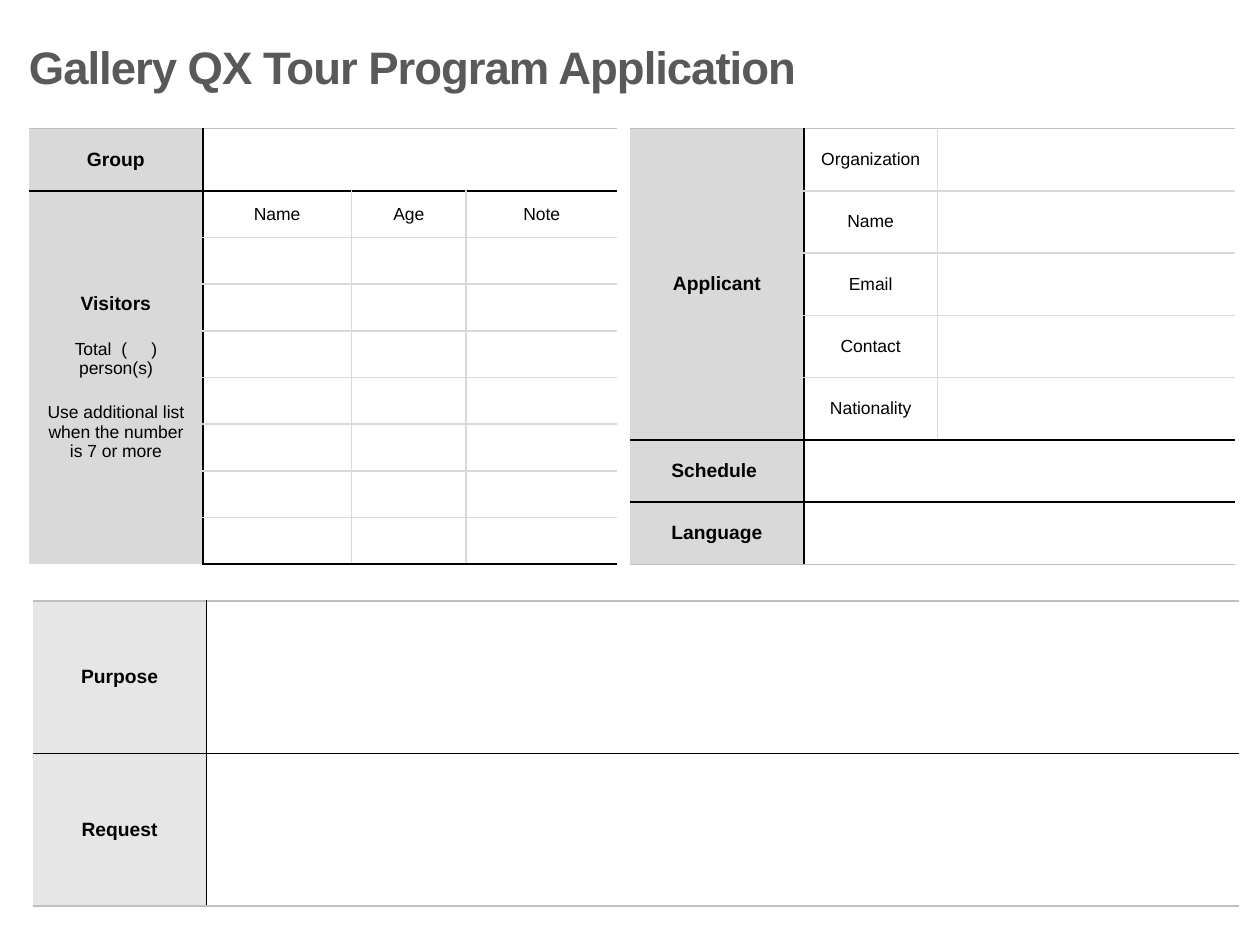
"""Build a one-page gallery tour application form from three ruled tables."""
from lxml import etree
from pptx import Presentation
from pptx.dml.color import RGBColor
from pptx.enum.text import MSO_ANCHOR, PP_ALIGN
from pptx.oxml.ns import qn
from pptx.util import Inches, Pt

MID, LEFT, CENTER = MSO_ANCHOR.MIDDLE, PP_ALIGN.LEFT, PP_ALIGN.CENTER
HUES = {"ink": "000000", "title": "595959", "rule": "D9D9D9",
        "rim": "BFBFBF", "label": "D9D9D9", "pale": "E6E6E6"}


def write(frame, text, size=10, bold=False, hue="ink", align=CENTER, gap=0, track=0):
    for i, line in enumerate(text.split("\n")):
        para = frame.paragraphs[0] if i == 0 and not frame.text else frame.add_paragraph()
        para.alignment = align
        para.space_before = Pt(gap)
        run = para.add_run()
        run.text = line
        font = run.font
        font.name, font.size, font.bold = "Arial", Pt(size), bold
        font.color.rgb = RGBColor.from_string(HUES[hue])
        if track:
            run._r.get_or_add_rPr().set("spc", str(track))


def edge(cell, spot, side, hue):
    line = etree.Element(qn("a:ln" + side), w=str(Pt(1)))
    if hue:
        fill = etree.SubElement(line, qn("a:solidFill"))
        etree.SubElement(fill, qn("a:srgbClr"), val=HUES[hue])
    else:
        etree.SubElement(line, qn("a:noFill"))
    cell._tc.get_or_add_tcPr().insert(spot, line)


deck = Presentation()
deck.slide_width, deck.slide_height = Inches(10), Inches(7.5)
slide = deck.slides.add_slide(deck.slide_layouts[6])
across, down = deck.slide_width / 100, deck.slide_height / 100

forms = [
    dict(at=(2.3, 13.6), cols=[13.8, 11.8, 9.1, 12], rows=[6.59] + [4.94] * 8,
         spans=[(0, 1, 0, 3), (1, 0, 8, 0)], bars=[0], foot="ink", tint="label",
         heads={0: "Group", 1: "Visitors"},
         words={(1, 1): "Name", (1, 2): "Age", (1, 3): "Note"}),
    dict(at=(50, 13.6), cols=[13.8, 10.6, 23.6], rows=[6.59] * 7,
         spans=[(0, 0, 4, 0), (5, 1, 5, 2), (6, 1, 6, 2)], bars=[4, 5],
         foot="rim", tint="label",
         heads={0: "Applicant", 5: "Schedule ", 6: "Language"},
         words={(i, 1): word for i, word in enumerate(
             ["Organization", "Name", "Email", "Contact", "Nationality"])}),
    dict(at=(2.6, 63.6), cols=[13.8, 81.9], rows=[16.13] * 2, spans=[], bars=[0],
         foot="rim", tint="pale", heads={0: "Purpose", 1: "Request"}, words={}),
]

grids = []
for form in forms:
    cols, rows = form["cols"], form["rows"]
    left, top = form["at"]
    grid = slide.shapes.add_table(
        len(rows), len(cols), int(left * across), int(top * down),
        int(sum(cols) * across), int(sum(rows) * down)).table
    grid.first_row = grid.horz_banding = False
    grids.append(grid)
    for i, wide in enumerate(cols):
        grid.columns[i].width = int(wide * across)
    for i, high in enumerate(rows):
        grid.rows[i].height = int(high * down)

    owner = {}
    for r1, c1, r2, c2 in form["spans"]:
        grid.cell(r1, c1).merge(grid.cell(r2, c2))
        for row in range(r1, r2 + 1):
            for col in range(c1, c2 + 1):
                owner[row, col] = (r1, c1)

    beam = [form["foot"] if i == len(rows) - 1 else "ink" if i in form["bars"] else "rule"
            for i in range(len(rows))]
    for row in range(len(rows)):
        for col in range(len(cols)):
            cell = grid.cell(row, col)
            cell.vertical_anchor = MID
            cell.margin_top = cell.margin_bottom = 0
            if col == 0:
                cell.fill.solid()
                cell.fill.fore_color.rgb = RGBColor.from_string(HUES[form["tint"]])
            else:
                cell.fill.background()
            home = owner.get((row, col), (row, col))
            sides = [
                ("L", (row, col - 1), None if col == 0 else "ink" if col == 1 else "rule"),
                ("R", (row, col + 1), None if col == len(cols) - 1
                 else "ink" if col == 0 else "rule"),
                ("T", (row - 1, col), beam[row - 1] if row else "rim"),
                ("B", (row + 1, col), beam[row]),
            ]
            for spot, (side, near, hue) in enumerate(sides):
                edge(cell, spot, side, None if owner.get(near) == home else hue)

    for row, text in form["heads"].items():
        write(grid.cell(row, 0).text_frame, text, size=11, bold=True)
    for (row, col), text in form["words"].items():
        write(grid.cell(row, col).text_frame, text)

write(grids[0].cell(1, 0).text_frame,
      "Total  (     ) person(s)\nUse additional list when the number is 7 or more", gap=14)

box = slide.shapes.add_textbox(int(2.3 * across), int(4.1 * down),
                               int(97.7 * across), int(5.9 * down))
frame = box.text_frame
frame.word_wrap = True
frame.margin_left = frame.margin_right = frame.margin_top = frame.margin_bottom = 0
write(frame, "Gallery QX Tour Program Application", size=26, bold=True, hue="title",
      align=LEFT, gap=5, track=-60)

deck.save("out.pptx")
